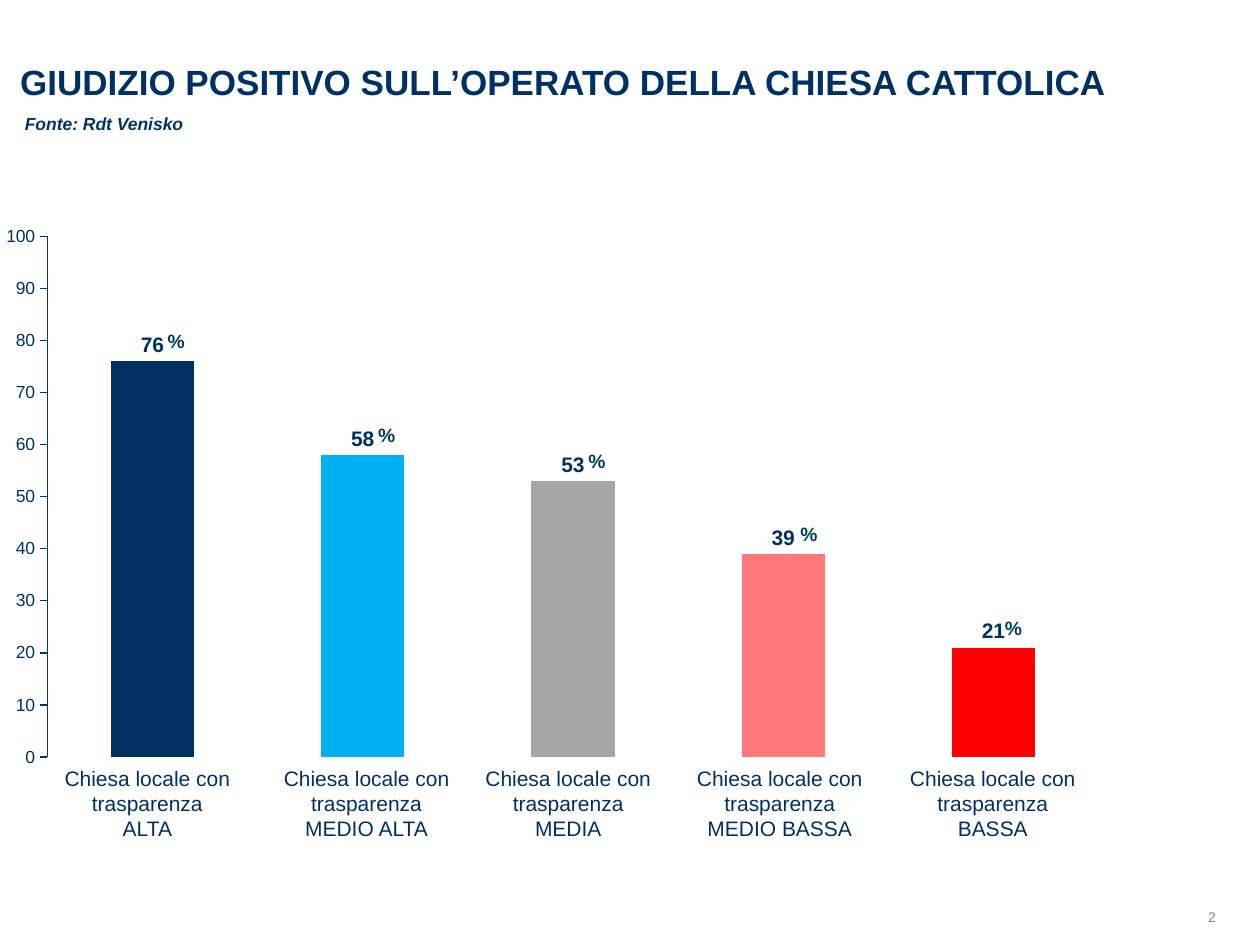
from lxml.etree import SubElement
from pptx import Presentation
from pptx.chart.data import CategoryChartData
from pptx.dml.color import RGBColor
from pptx.enum.chart import XL_CHART_TYPE, XL_LABEL_POSITION, XL_TICK_MARK
from pptx.enum.shapes import MSO_SHAPE
from pptx.enum.text import MSO_ANCHOR, PP_ALIGN
from pptx.oxml.ns import qn
from pptx.util import Pt

TITLE = "GIUDIZIO POSITIVO SULL’OPERATO DELLA CHIESA CATTOLICA"
SOURCE = "Fonte: Rdt Venisko"
PAGE_NUMBER = "2"
CAPTION = "Chiesa locale con trasparenza"
NAVY, TEAL = "003165", "003D5A"
LEVELS = [
    {"name": "ALTA", "value": 76, "colour": "003165", "caption_left": 3.6, "sign_shift": 2.2},
    {"name": "MEDIO ALTA", "value": 58, "colour": "00B0F0", "caption_left": 128.9, "sign_shift": 2.2},
    {"name": "MEDIA", "value": 53, "colour": "A6A6A6", "caption_left": 244.1, "sign_shift": 2.2},
    {"name": "MEDIO BASSA", "value": 39, "colour": "FF7979", "caption_left": 365, "sign_shift": 3.2},
    {"name": "BASSA", "value": 21, "colour": "FF0000", "caption_left": 486.7, "sign_shift": 0},
]
CHART_BOX = (-92, 124.2, 753.8, 319.7)
PLOT = {"x": 0.158, "y": 0.034, "w": 0.797, "h": 0.931}
BOX_INSETS = (6.48, 2.88)


def rgb(hex_colour):
    return RGBColor.from_string(hex_colour)


def set_fill(fill, colour):
    fill.solid()
    fill.fore_color.rgb = rgb(colour)


def style_font(font, size, colour, bold=False, italic=False):
    font.name, font.size, font.bold, font.italic = "Arial", Pt(size), bold, italic
    font.color.rgb = rgb(colour)


def set_frame(frame, insets=(0, 0), anchor=MSO_ANCHOR.TOP):
    frame.word_wrap = True
    frame.margin_left = frame.margin_right = Pt(insets[0])
    frame.margin_top = frame.margin_bottom = Pt(insets[1])
    frame.vertical_anchor = anchor


def write_lines(frame, lines, size, colour, bold=False, italic=False,
                align=PP_ALIGN.LEFT, spacing=1.0):
    for index, line in enumerate(lines):
        paragraph = frame.add_paragraph() if index else frame.paragraphs[0]
        paragraph.alignment, paragraph.line_spacing = align, spacing
        run = paragraph.add_run()
        run.text = line
        style_font(run.font, size, colour, bold, italic)


def add_text(slide, box, lines, size, colour, insets=(0, 0), **style):
    frame = slide.shapes.add_textbox(*map(Pt, box)).text_frame
    set_frame(frame, insets)
    write_lines(frame, lines, size, colour, **style)


def add_page_number(slide):
    page = slide.shapes.add_shape(
        MSO_SHAPE.RECTANGLE, *map(Pt, (598.3, 519.8, 96.5, 8.6)))
    page.shadow.inherit = False
    page.line.fill.background()
    set_fill(page.fill, "FFFFFF")
    set_frame(page.text_frame, anchor=MSO_ANCHOR.MIDDLE)
    write_lines(page.text_frame, [PAGE_NUMBER], 8, "928580", align=PP_ALIGN.RIGHT)


def add_title(slide):
    title = slide.shapes.title
    title.left, title.top, title.width, title.height = map(Pt, (11.5, 34.3, 733.7, 48.2))
    set_frame(title.text_frame)
    write_lines(title.text_frame, [TITLE], 20, NAVY, bold=True)


def set_plot_layout(chart):
    plot_area = chart.plots[0]._element.getparent()
    layout = plot_area.find(qn("c:layout"))
    if layout is None:
        layout = SubElement(plot_area, qn("c:layout"))
        plot_area.insert(0, layout)
    manual = SubElement(layout, qn("c:manualLayout"))
    settings = {"layoutTarget": "inner", "xMode": "edge", "yMode": "edge", **PLOT}
    for tag, value in settings.items():
        SubElement(manual, qn(f"c:{tag}")).set("val", str(value))


def add_bars(slide):
    data = CategoryChartData()
    data.categories = [str(number) for number in range(1, len(LEVELS) + 1)]
    data.add_series("Series 1", [level["value"] for level in LEVELS])
    chart = slide.shapes.add_chart(
        XL_CHART_TYPE.COLUMN_CLUSTERED, *map(Pt, CHART_BOX), data).chart
    chart.has_legend = chart.has_title = False
    chart.font.name, chart.font.size = "Lato", Pt(18)
    chart.font.color.rgb = rgb("000000")
    set_plot_layout(chart)

    chart.category_axis.visible = False
    axis = chart.value_axis
    axis.minimum_scale, axis.maximum_scale, axis.major_unit = 0, 100, 10
    axis.has_major_gridlines = False
    axis.major_tick_mark = XL_TICK_MARK.OUTSIDE
    axis.format.line.color.rgb = rgb(TEAL)
    axis.format.line.width = Pt(0.75)
    style_font(axis.tick_labels.font, 10, NAVY)

    plot = chart.plots[0]
    plot.gap_width, plot.overlap, plot.vary_by_categories = 153, 46, False
    series = plot.series[0]
    set_fill(series.format.fill, "005B88")
    for index, level in enumerate(LEVELS):
        set_fill(series.points[index].format.fill, level["colour"])
    labels = series.data_labels
    labels.show_value = True
    labels.position = XL_LABEL_POSITION.OUTSIDE_END
    style_font(labels.font, 12, NAVY, bold=True)


def add_bar_texts(slide):
    left, top, width, height = CHART_BOX
    plot_left, plot_top = left + PLOT["x"] * width, top + PLOT["y"] * height
    step, plot_height = PLOT["w"] * width / len(LEVELS), PLOT["h"] * height
    for index, level in enumerate(LEVELS):
        sign_left = plot_left + (index + 0.5) * step + level["sign_shift"]
        bar_top = plot_top + plot_height * (1 - level["value"] / 100)
        add_text(slide, (sign_left, bar_top - 20.2, 21.6, 19.4), ["%"],
                 11, TEAL, BOX_INSETS, bold=True, spacing=0.95)
        add_text(slide, (level["caption_left"], 434.5, 161.3, 49.7),
                 [CAPTION, level["name"]], 12, "003164", BOX_INSETS,
                 align=PP_ALIGN.CENTER)


def main():
    """Build the slide on the approval of the Catholic Church by local transparency."""
    deck = Presentation()
    deck.slide_width, deck.slide_height = Pt(720), Pt(540)
    slide = deck.slides.add_slide(deck.slide_layouts[5])
    add_page_number(slide)
    add_text(slide, (14.2, 64.8, 246.2, 12.2), [SOURCE], 10, "003366",
             bold=True, italic=True)
    add_bars(slide)
    add_title(slide)
    add_bar_texts(slide)
    deck.save("out.pptx")


if __name__ == "__main__":
    main()
